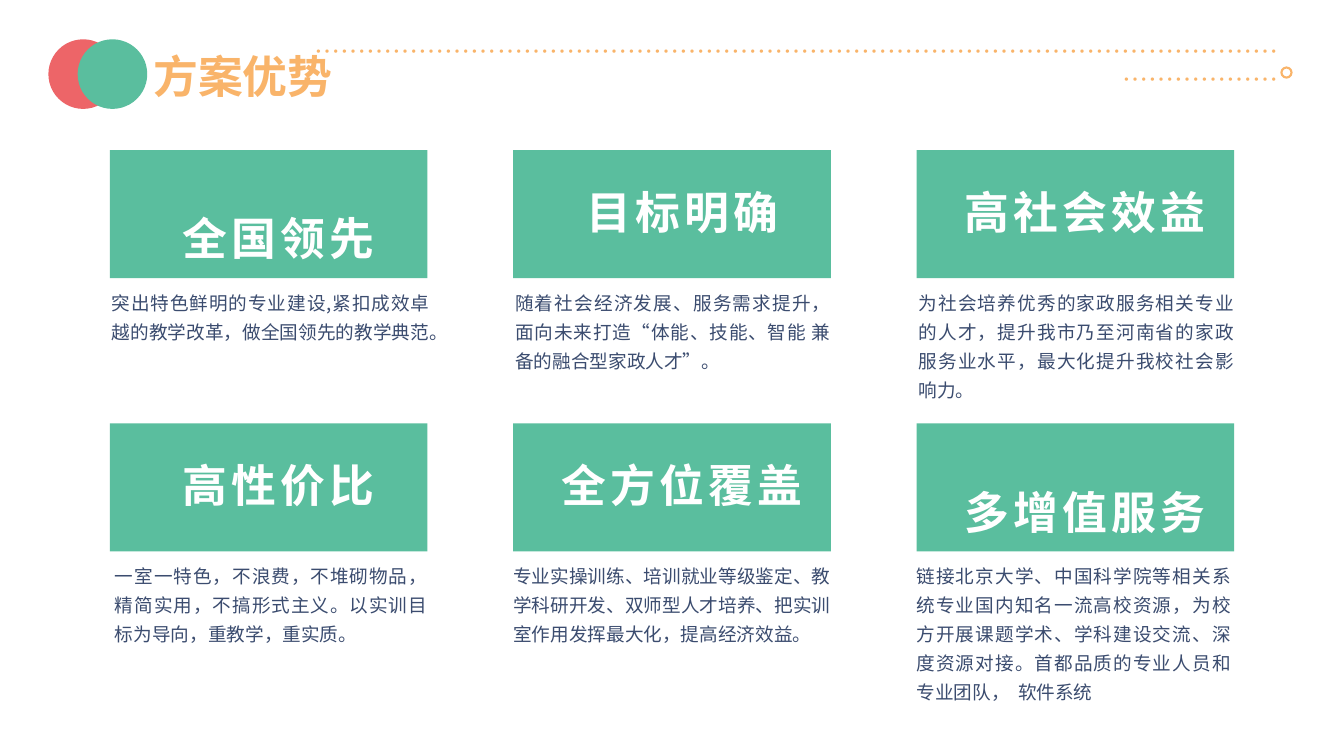
from pptx import Presentation
from pptx.dml.color import RGBColor
from pptx.enum.shapes import MSO_SHAPE
from pptx.enum.text import MSO_ANCHOR, PP_ALIGN
from pptx.oxml.ns import qn
from pptx.util import Inches, Pt
from lxml import etree

RECTANGLE, OVAL = MSO_SHAPE.RECTANGLE, MSO_SHAPE.OVAL
TOP, MIDDLE = MSO_ANCHOR.TOP, MSO_ANCHOR.MIDDLE
LEFT, CENTER, RIGHT, JUSTIFY = PP_ALIGN.LEFT, PP_ALIGN.CENTER, PP_ALIGN.RIGHT, PP_ALIGN.JUSTIFY
FONT = "Noto Sans CJK SC"
COLORS = {"green": "5ABE9E", "red": "ED6568", "orange": "F9B46A",
          "navy": "3B4C6F", "white": "FFFFFF"}

presentation = Presentation()
presentation.slide_width, presentation.slide_height = Inches(13.33), Inches(7.5)
slide = presentation.slides.add_slide(presentation.slide_layouts[6])


def add_shape(kind, left, top, width, height, fill=None, line=None):
    shape = slide.shapes.add_shape(kind, Inches(left), Inches(top), Inches(width), Inches(height))
    shape.shadow.inherit = False
    if fill:
        shape.fill.solid()
        shape.fill.fore_color.rgb = RGBColor.from_string(COLORS[fill])
    else:
        shape.fill.background()
    if line:
        shape.line.color.rgb = RGBColor.from_string(COLORS[line])
        shape.line.width = Pt(1.5)
    else:
        shape.line.fill.background()
    return shape


def write_text(shape, text, size, color, align=LEFT, anchor=TOP, spacing=1.0,
               indent=0, inset_top=0, bold=False, tracking=0):
    frame = shape.text_frame
    frame.word_wrap = True
    frame.vertical_anchor = anchor
    frame.margin_left = frame.margin_right = frame.margin_bottom = 0
    frame.margin_top = Inches(inset_top)
    paragraph = frame.paragraphs[0]
    paragraph.alignment = align
    paragraph.line_spacing = spacing
    if indent:
        paragraph._p.get_or_add_pPr().set("marL", str(Inches(indent)))
    run = paragraph.add_run()
    run.text = text
    run.font.size, run.font.bold, run.font.name = Pt(size), bold, FONT
    run.font.color.rgb = RGBColor.from_string(COLORS[color])
    properties = run.font._element
    etree.SubElement(properties, qn("a:ea")).set("typeface", FONT)
    if tracking:
        properties.set("spc", str(tracking * 100))


# Heading with overlapping circles
heading = slide.shapes.add_textbox(Inches(1.52), Inches(0.43), Inches(1.9), Inches(0.64))
write_text(heading, "方案优势", 32, "orange", inset_top=0.05, bold=True)
for left, color in ((0.48, "red"), (0.77, "green")):
    add_shape(OVAL, left, 0.39, 0.69, 0.69, fill=color)

# Dotted rule ending in a ring
dots = slide.shapes.add_textbox(Inches(3.05), Inches(0.49), Inches(9.63), Inches(0.36))
write_text(dots, "…" * 43, 18.6, "orange", RIGHT, MIDDLE, spacing=0.88)
add_shape(OVAL, 12.71, 0.67, 0.1, 0.1, line="orange")

# Advantages: title, lowered title inset, description, its left edge, width and indent
ADVANTAGES = [
    ("全国领先", 0.52, "突出特色鲜明的专业建设,紧扣成效卓越的教学改革，做全国领先的教学典范。",
     1.09, 3.17, 0.02),
    ("目标明确", 0, "随着社会经济发展、服务需求提升， 面向未来打造“体能、技能、智能 兼备的融合型家政人才”。",
     5.09, 3.15, 0.02),
    ("高社会效益", 0, "为社会培养优秀的家政服务相关专业的人才，提升我市乃至河南省的家政服务业水平，最大化提升我校社会影响力。",
     9.09, 3.15, 0.02),
    ("高性价比", 0, "一室一特色，不浪费，不堆砌物品， 精简实用，不搞形式主义。以实训目标为导向，重教学，重实质。",
     1.12, 3.12, 0.02),
    ("全方位覆盖", 0, "专业实操训练、培训就业等级鉴定、教 学科研开发、双师型人才培养、把实训 室作用发挥最大化，提高经济效益。",
     5.09, 3.15, 0),
    ("多增值服务", 0.52, "链接北京大学、中国科学院等相关系统专业国内知名一流高校资源，为校方开展课题学术、学科建设交流、深度资源对接。首都品质的专业人员和专业团队，  软件系统",
     9.09, 3.12, 0),
]
for index, (title, drop, description, left, width, indent) in enumerate(ADVANTAGES):
    row, column = divmod(index, 3)
    top = 1.49 + row * 2.71
    tile = add_shape(RECTANGLE, 1.09 + column * 4, top, 3.15, 1.27, fill="green")
    write_text(tile, title, 32, "white", CENTER, MIDDLE, spacing=0.96,
               indent=0.2, inset_top=drop, bold=True, tracking=3)
    body = slide.shapes.add_textbox(Inches(left), Inches(top + 1.34), Inches(width), Inches(1.2))
    write_text(body, description, 13.3, "navy", JUSTIFY, spacing=1.3, indent=indent)

presentation.save("out.pptx")
